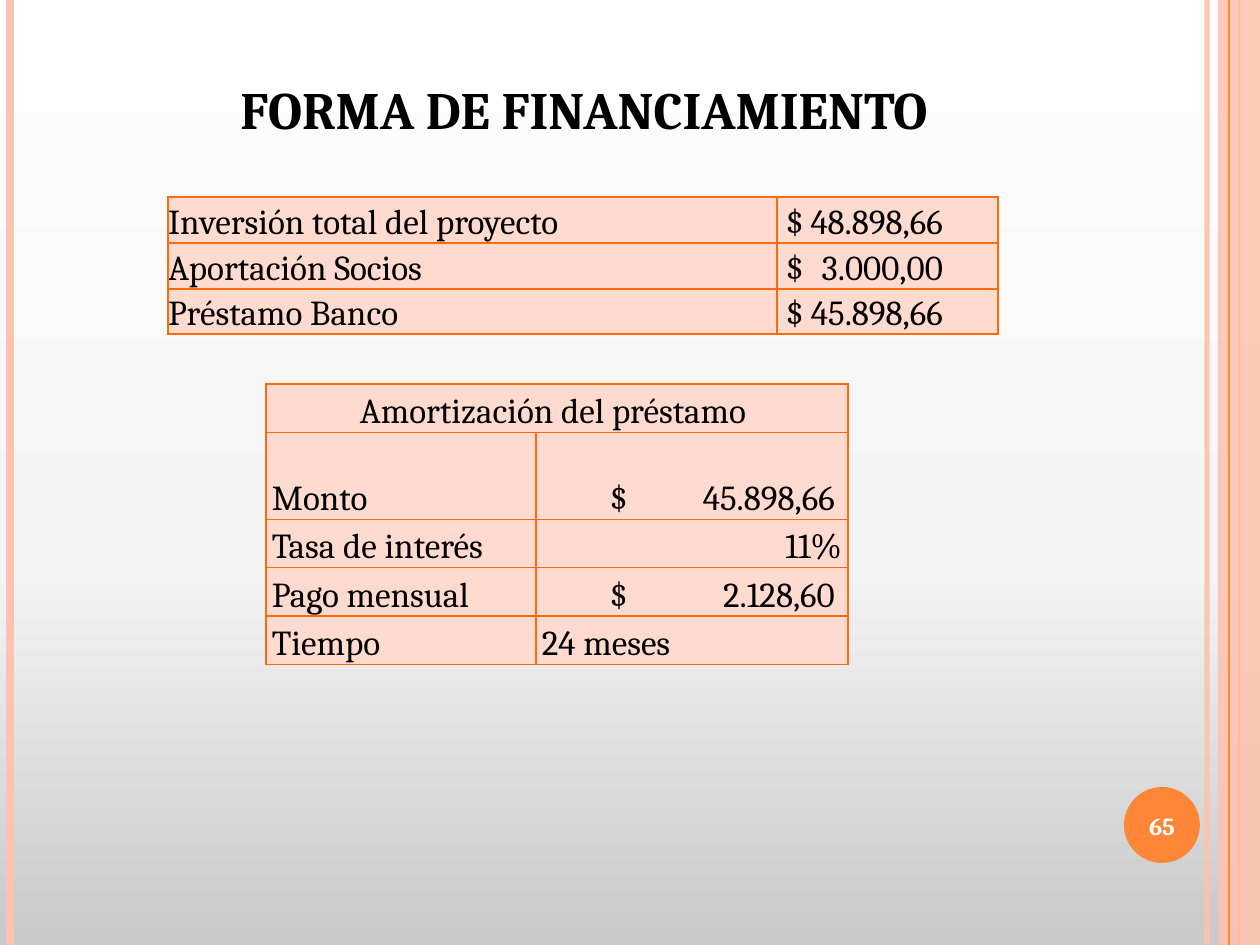
from lxml.etree import SubElement
from pptx import Presentation
from pptx.dml.color import RGBColor
from pptx.enum.shapes import MSO_CONNECTOR, MSO_SHAPE
from pptx.enum.text import MSO_ANCHOR, PP_ALIGN
from pptx.oxml import parse_xml
from pptx.oxml.ns import nsdecls, qn
from pptx.util import Emu, Pt

PX_PER_INCH = 126
WIDTH, HEIGHT = 1260, 945
FONT = "Cambria"
BLACK = RGBColor(0x00, 0x00, 0x00)
WHITE = RGBColor(0xFF, 0xFF, 0xFF)
ORANGE = RGBColor(0xFE, 0x86, 0x37)
PEACH = RGBColor(0xFE, 0xC3, 0xAE)
CELL_FILL = RGBColor(0xFF, 0xDA, 0xCF)
BORDER = RGBColor(0xFF, 0x6B, 0x0A)
BACKGROUND = [(0, "C9C9C9"), (40, "F4F4F4"), (100, "FFFFFF")]

INVESTMENT = [
    ("Inversión total del proyecto", "$\t48.898,66"),
    ("Aportación Socios", "$\t3.000,00"),
    ("Préstamo Banco", "$\t45.898,66"),
]
LOAN = [
    ("Monto", "$\t45.898,66"),
    ("Tasa de interés", "11%"),
    ("Pago mensual", "$\t2.128,60"),
    ("Tiempo", "24 meses"),
]


def px(n):
    return Emu(round(n * 914400 / PX_PER_INCH))


def set_background(s):
    stops = "".join(
        f'<a:gs pos="{pos * 1000}"><a:srgbClr val="{color}"/></a:gs>'
        for pos, color in BACKGROUND)
    grad = parse_xml(
        f'<a:gradFill {nsdecls("a")} rotWithShape="1"><a:gsLst>{stops}</a:gsLst>'
        '<a:lin ang="16200000" scaled="0"/></a:gradFill>')
    s.background.fill.solid()
    solid = s.background._cSld.find(".//" + qn("a:solidFill"))
    solid.getparent().replace(solid, grad)


def set_alpha(fill, percent):
    color = fill._xPr.find(qn("a:solidFill"))[0]
    SubElement(color, qn("a:alpha"), val=str(percent * 1000))


def add_stripe(s, x, color, width, alpha=100):
    """Draw a vertical line over the full slide height."""
    line = s.shapes.add_connector(MSO_CONNECTOR.STRAIGHT, px(x), 0, px(x), px(HEIGHT))
    line.line.color.rgb = color
    line.line.width = Pt(width)
    if alpha < 100:
        set_alpha(line.line.fill, alpha)
    SubElement(line._element.spPr, qn("a:effectLst"))


def add_block(s, kind, box, color, alpha=100):
    sp = s.shapes.add_shape(kind, *map(px, box))
    sp.shadow.inherit = False
    sp.fill.solid()
    sp.fill.fore_color.rgb = color
    if alpha < 100:
        set_alpha(sp.fill, alpha)
    sp.line.fill.background()


def add_run(p, text, size, color=BLACK, bold=False):
    r = p.add_run()
    r.text = text
    r.font.name = FONT
    r.font.size = Pt(size)
    r.font.bold = bold
    r.font.color.rgb = color


def add_text(s, box, text, size, color, anchor):
    tf = s.shapes.add_textbox(*map(px, box)).text_frame
    tf.word_wrap = True
    tf.vertical_anchor = anchor
    p = tf.paragraphs[0]
    p.alignment = PP_ALIGN.CENTER
    add_run(p, text, size, color, bold=True)


def add_table(s, left, top, cols, rows):
    frame = s.shapes.add_table(len(rows), len(cols), px(left), px(top),
                               px(sum(cols)), px(sum(rows)))
    table = frame.table
    table.first_row = table.horz_banding = False
    for column, width in zip(table.columns, cols):
        column.width = px(width)
    for row, height in zip(table.rows, rows):
        row.height = px(height)
    for cell in table.iter_cells():
        style_cell(cell)
    return table


def style_cell(cell):
    tcPr = cell._tc.get_or_add_tcPr()
    for side in ("lnL", "lnR", "lnT", "lnB"):
        ln = SubElement(tcPr, qn(f"a:{side}"), w=str(Pt(1)))
        fill = SubElement(ln, qn("a:solidFill"))
        SubElement(fill, qn("a:srgbClr"), val=str(BORDER))
    cell.fill.solid()
    cell.fill.fore_color.rgb = CELL_FILL
    cell.vertical_anchor = MSO_ANCHOR.BOTTOM


def write_cell(cell, text, margin=0, align=PP_ALIGN.LEFT, spacing=1.0, left=None, tab=None):
    """Fill a cell; left overrides the left margin, tab is a right-aligned stop."""
    cell.margin_left = px(margin if left is None else left)
    cell.margin_right = px(margin)
    cell.margin_top = cell.margin_bottom = 0
    p = cell.text_frame.paragraphs[0]
    p.alignment = align
    p.line_spacing = spacing
    if tab:
        tabs = SubElement(p._p.get_or_add_pPr(), qn("a:tabLst"))
        SubElement(tabs, qn("a:tab"), pos=str(px(tab)), algn="r")
    add_run(p, text, 20)


def add_investment_table(s):
    table = add_table(s, 168, 197, [609, 221], [46, 46, 45])
    for i, (label, amount) in enumerate(INVESTMENT):
        write_cell(table.cell(i, 0), label)
        write_cell(table.cell(i, 1), amount, left=9, tab=157)


def add_loan_table(s):
    table = add_table(s, 266, 384, [270, 312], [46, 87, 46, 47, 46])
    style = {"margin": 6, "spacing": 1.15}
    table.cell(0, 0).merge(table.cell(0, 1))
    write_cell(table.cell(0, 0), "Amortización del préstamo ", align=PP_ALIGN.CENTER, **style)
    for i, (label, value) in enumerate(LOAN, start=1):
        write_cell(table.cell(i, 0), label, **style)
        cell = table.cell(i, 1)
        if "\t" in value:
            write_cell(cell, value, left=74, tab=225, **style)
        else:
            align = PP_ALIGN.RIGHT if value.endswith("%") else PP_ALIGN.LEFT
            write_cell(cell, value, align=align, **style)


def main():
    prs = Presentation()
    prs.slide_width, prs.slide_height = px(WIDTH), px(HEIGHT)
    s = prs.slides.add_slide(prs.slide_layouts[6])
    set_background(s)
    add_stripe(s, 1207, PEACH, 3, alpha=93)
    add_stripe(s, 10, PEACH, 4.5)
    add_stripe(s, 1239, ORANGE, 1.5)
    add_block(s, MSO_SHAPE.RECTANGLE, (1218, 0, 42, HEIGHT), PEACH, alpha=87)
    add_stripe(s, 1229, ORANGE, 0.75)
    add_block(s, MSO_SHAPE.OVAL, (1124, 787, 76, 76), ORANGE)
    add_text(s, (69, 39, 1030, 107), "FORMA DE FINANCIAMIENTO", 30, BLACK, MSO_ANCHOR.BOTTOM)
    add_loan_table(s)
    add_investment_table(s)
    add_text(s, (1120, 790, 84, 72), "65", 14, WHITE, MSO_ANCHOR.MIDDLE)
    prs.save("out.pptx")


if __name__ == "__main__":
    main()
